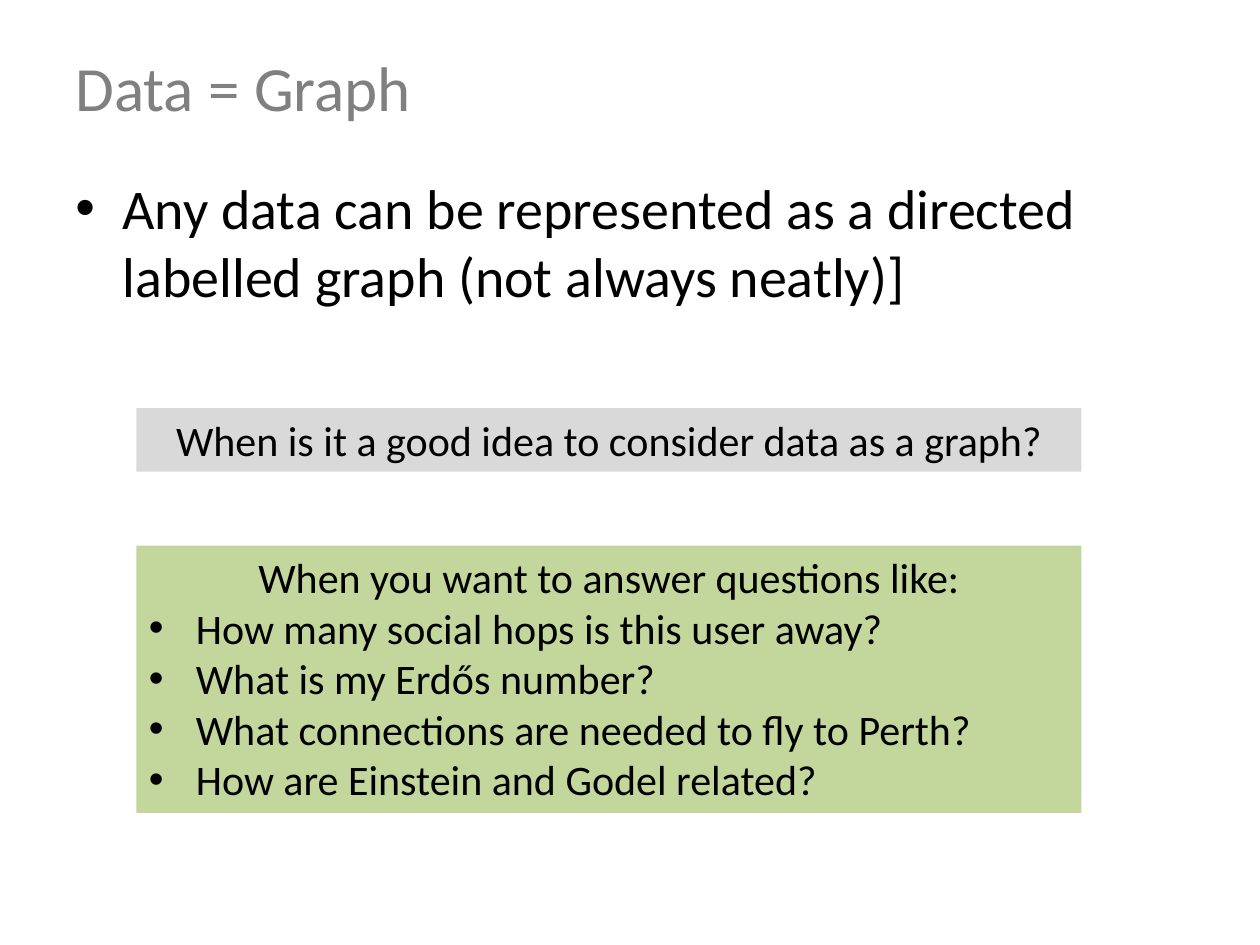
from pptx import Presentation
from pptx.dml.color import RGBColor
from pptx.enum.shapes import MSO_SHAPE
from pptx.enum.text import MSO_ANCHOR, PP_ALIGN
from pptx.oxml.ns import qn
from pptx.util import Cm, Pt
from lxml import etree

TITLE_GREY = RGBColor(0x80, 0x80, 0x80)
BLACK = RGBColor(0x00, 0x00, 0x00)
QUESTION_GREY = RGBColor(0xD9, 0xD9, 0xD9)
ANSWER_GREEN = RGBColor(0xC3, 0xD6, 0x9B)
LEFT, CENTER = PP_ALIGN.LEFT, PP_ALIGN.CENTER
TOP, MIDDLE = MSO_ANCHOR.TOP, MSO_ANCHOR.MIDDLE
RECTANGLE = MSO_SHAPE.RECTANGLE
FONT = "Calibri"
INDENT = Cm(0.95)


def add_paragraph(p, text, size, color=BLACK, align=LEFT, bullet=False):
    p.alignment = align
    if bullet:
        pPr = p._p.get_or_add_pPr()
        pPr.set("marL", str(INDENT))
        pPr.set("indent", str(-INDENT))
        etree.SubElement(pPr, qn("a:buFont")).set("typeface", "Arial")
        etree.SubElement(pPr, qn("a:buChar")).set("char", "•")
    r = p.add_run()
    r.text = text
    r.font.name = FONT
    r.font.size = Pt(size)
    r.font.color.rgb = color


prs = Presentation()
prs.slide_width = Cm(25.4)
prs.slide_height = Cm(19.05)
s = prs.slides.add_slide(prs.slide_layouts[6])

texts = [
    (0.76, 1.98, MIDDLE, "Data = Graph", 36, TITLE_GREY, False),
    (3.38, 13.64, TOP,
     "Any data can be represented as a directed labelled graph (not always neatly)]",
     32, BLACK, True),
]
for top, height, anchor, text, size, color, bullet in texts:
    sp = s.shapes.add_textbox(Cm(1.27), Cm(top), Cm(22.86), Cm(height))
    tf = sp.text_frame
    tf.word_wrap = True
    tf.vertical_anchor = anchor
    add_paragraph(tf.paragraphs[0], text, size, color, bullet=bullet)

panels = [
    (8.23, 1.28, QUESTION_GREY,
     "When is it a good idea to consider data as a graph?", []),
    (11, 5.39, ANSWER_GREEN, "When you want to answer questions like:", [
        "How many social hops is this user away?",
        "What is my Erdős number?",
        "What connections are needed to fly to Perth?",
        "How are Einstein and Godel related?",
    ]),
]
for top, height, fill, heading, bullets in panels:
    sp = s.shapes.add_shape(RECTANGLE, Cm(2.75), Cm(top), Cm(19.05), Cm(height))
    sp.shadow.inherit = False
    sp.fill.solid()
    sp.fill.fore_color.rgb = fill
    sp.line.fill.background()
    tf = sp.text_frame
    tf.word_wrap = True
    tf.vertical_anchor = TOP
    add_paragraph(tf.paragraphs[0], heading, 24, align=CENTER)
    for text in bullets:
        add_paragraph(tf.add_paragraph(), text, 24, bullet=True)

prs.save("out.pptx")
